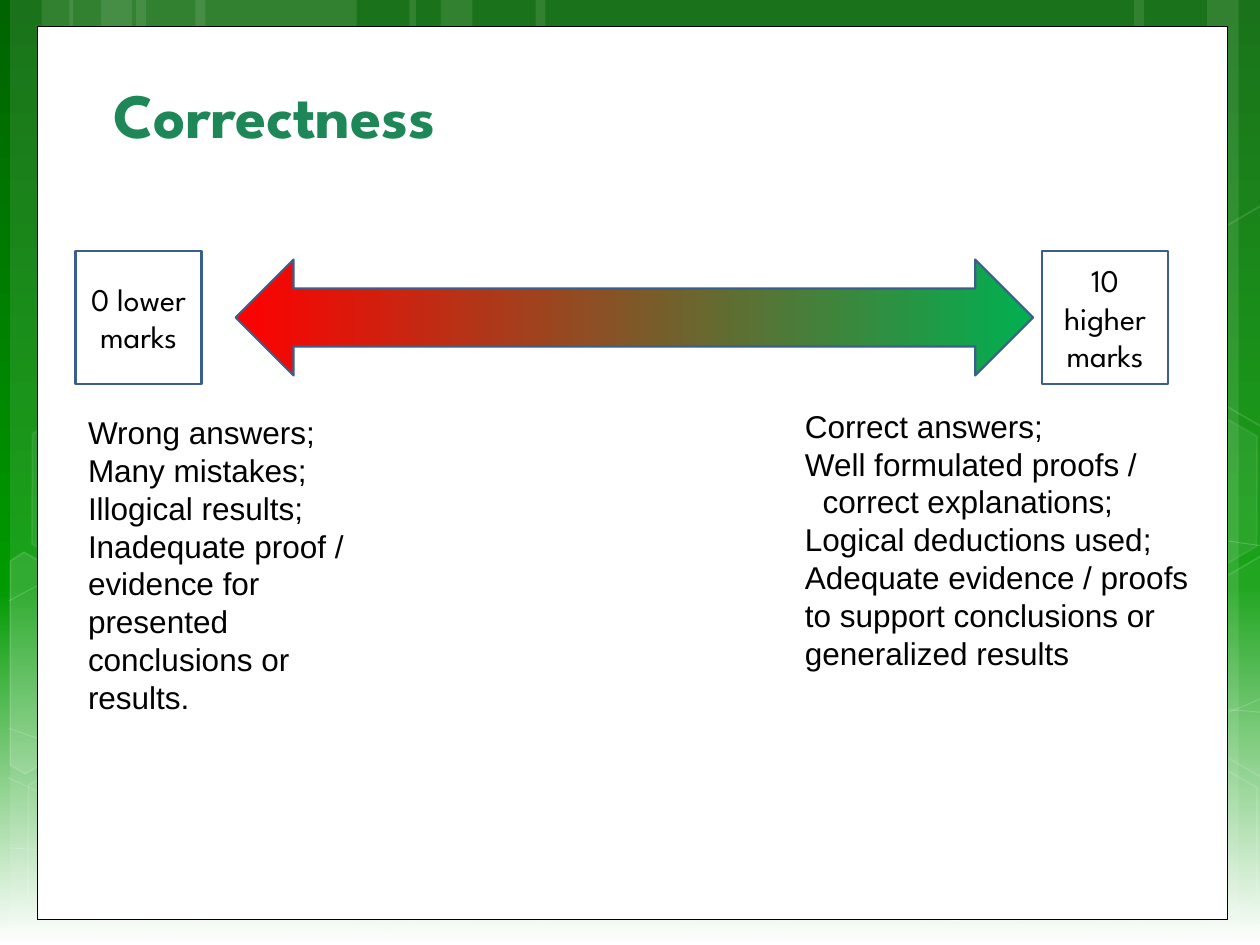
from copy import deepcopy
from math import cos, radians, sin

from lxml.etree import SubElement
from pptx import Presentation
from pptx.dml.color import RGBColor
from pptx.enum.shapes import MSO_SHAPE
from pptx.enum.text import MSO_ANCHOR, PP_ALIGN
from pptx.oxml.ns import qn
from pptx.util import Inches, Pt

WIDTH, HEIGHT = 10, 7.5
WHITE, BLACK = RGBColor(255, 255, 255), RGBColor(0, 0, 0)
DARK_GREEN, MID_GREEN = RGBColor(0, 0x64, 0), RGBColor(0, 0x99, 0)
TITLE_GREEN = RGBColor(0x1D, 0x87, 0x57)
BORDER_BLUE = RGBColor(0x3A, 0x5F, 0x8C)
LOW_RED, HIGH_GREEN = RGBColor(255, 0, 0), RGBColor(0, 0xB0, 0x50)
DISPLAY, BODY = "League Spartan", "Arial"

# Background stripes: left, width, rotation
STRIPES = [(1.08, 1.75, 0), (0.08, 0.5, 0), (0.33, 0.83, 0), (1.55, 1.75, 0),
           (0.55, 0.5, 0), (0.8, 0.83, 0), (7.33, 1.75, 180), (9.58, 0.5, 180),
           (9, 0.83, 180), (4.25, 3.08, 0), (3.25, 0.5, 0), (3.5, 0.83, 0)]

# Bezier curves: a start point, then three points per segment
CURVES = [
    [(0.07, 6.73), (0.61, 6.76), (1.15, 6.79), (1.9, 6.78), (2.65, 6.77), (3.58, 6.75),
     (4.58, 6.65), (5.58, 6.55), (7, 6.36), (7.92, 6.17), (8.83, 5.98), (9.77, 5.68),
     (10.07, 5.51)],
    [(0.07, 4.77), (0.36, 4.61), (0.65, 4.46), (1.21, 4.31), (1.78, 4.16), (2.59, 3.94),
     (3.47, 3.87), (4.36, 3.8), (5.44, 3.79), (6.54, 3.87), (7.64, 3.95), (9.47, 4.26),
     (10.07, 4.34)],
    [(0.06, 6.17), (1.27, 6.72), (2.47, 7.27), (3.34, 7.49)],
    [(0.07, 5.78), (0.38, 5.89), (0.7, 6), (1.28, 6.16), (1.86, 6.31), (2.73, 6.56),
     (3.57, 6.73), (4.4, 6.9), (5.45, 7.08), (6.28, 7.18), (7.11, 7.29), (8, 7.33),
     (8.53, 7.36), (9.05, 7.4), (9.19, 7.38), (9.45, 7.38), (9.71, 7.37), (9.89, 7.35),
     (10.07, 7.34)],
    [(2.42, 7.49), (2.6, 7.29), (2.78, 7.09), (3.02, 6.91), (3.26, 6.73), (3.6, 6.53),
     (3.88, 6.39), (4.16, 6.25), (4.33, 6.19), (4.7, 6.09), (5.06, 5.99), (5.73, 5.85),
     (6.08, 5.78), (6.44, 5.71), (6.49, 5.71), (6.8, 5.69), (7.11, 5.66), (7.6, 5.63),
     (7.94, 5.62), (8.29, 5.61), (8.86, 5.62), (8.86, 5.62), (9.08, 5.62), (9.3, 5.62),
     (9.53, 5.62), (9.71, 5.63), (9.88, 5.64), (9.97, 5.65), (10.06, 5.66), (10.03, 5.65),
     (10.06, 5.66)],
]
TILT = 30
# Hexagons: left, top, fill opacity (None for no fill), line opacity, in percent
HEXAGONS = [(3.34, 0.36, 4, 8), (4.97, 5.89, 6, 12), (0.11, 5.91, None, 12),
            (0.14, 3.12, 7, 8), (1.74, 5.92, None, 12), (8.34, 5.93, None, 12),
            (8.34, 3.14, 7, 8)]
# Hexagons cut off by the slide's edge: centre, corners as they stand tilted, fill opacity
CUT_HEXAGONS = [
    ((0.36, 5.35), [(0.08, 4.45), (0.19, 4.38), (0.96, 4.82), (0.95, 5.7), (0.2, 6.14),
                    (0.08, 6.07)], 10),
    ((9.85, 5.2), [(9.26, 4.85), (10.01, 4.41), (10.09, 4.46), (10.09, 6.13),
                   (10.02, 6.17), (9.26, 5.73)], 4),
    ((9.85, 2.41), [(9.26, 2.07), (10.01, 1.63), (10.1, 1.68), (10.09, 3.35),
                    (10.02, 3.39), (9.26, 2.95)], None),
]

TITLE = "Correctness"
# Marks at the ends of the scale: left, text
MARKS = [(0.6, "0 lower marks"), (8.27, "10 higher marks")]
# Descriptions: place, then paragraphs with their indent
DESCRIPTIONS = [
    ((0.6, 3.23, 2.45, 2.83), [
        ("Wrong answers;", 0),
        ("Many mistakes;", 0),
        ("Illogical results; Inadequate proof / evidence for presented conclusions or results.",
         0)]),
    ((6.29, 3.18, 3.37, 2.52), [
        ("Correct answers;", 0),
        ("Well formulated proofs /", 0),
        ("correct explanations;", 0.14),
        ("Logical deductions used;", 0),
        ("Adequate evidence / proofs to support conclusions or generalized results", 0)]),
]
TITLE_FORMAT = {"name": DISPLAY, "size": Pt(36), "bold": True}
MARK_FORMAT = {"name": DISPLAY, "size": Pt(18)}
BODY_FORMAT = {"name": BODY, "size": Pt(18)}

prs = Presentation()
prs.slide_width, prs.slide_height = Inches(WIDTH), Inches(HEIGHT)
slide = prs.slides.add_slide(prs.slide_layouts[6])


def set_gradient(fill, stops, angle):
    fill.gradient()
    fill.gradient_angle = angle
    first = fill.gradient_stops[0]._gs
    while len(fill.gradient_stops) < len(stops):
        first.addnext(deepcopy(first))
    for stop, (position, color) in zip(fill.gradient_stops, stops):
        stop.position = position
        stop.color.rgb = color


def paint(fill, color, opacity=100):
    """Fill with a colour at an opacity in percent, or not at all for None."""
    if color is None or opacity is None:
        fill.background()
        return
    fill.solid()
    fill.fore_color.rgb = color
    if opacity < 100:
        srgb = fill._xPr.find(".//" + qn("a:srgbClr"))
        SubElement(srgb, qn("a:alpha"), val=str(opacity * 1000))


def style(shape, fill=None, fill_opacity=100, line=None, line_opacity=100, width=1):
    shape.shadow.inherit = False
    paint(shape.fill, fill, fill_opacity)
    paint(shape.line.fill, line, line_opacity)
    if line is not None:
        shape.line.width = Pt(width)
    return shape


def add_preset(kind, place, rotation=0):
    shape = slide.shapes.add_shape(kind, *map(Inches, place))
    shape.rotation = rotation
    return shape


def add_outline(points, close):
    corners = [(Inches(x), Inches(y)) for x, y in points]
    builder = slide.shapes.build_freeform(*corners[0], scale=1.0)
    builder.add_line_segments(corners[1:], close=close)
    return builder.convert_to_shape()


def add_curve(points):
    """Join each three line segments of an outline into one Bezier segment."""
    curve = add_outline(points, False)
    lines = list(curve._element.iter(qn("a:lnTo")))
    for i in range(0, len(lines), 3):
        bezier = SubElement(lines[i].getparent(), qn("a:cubicBezTo"))
        for line in lines[i:i + 3]:
            bezier.append(line[0])
            line.getparent().remove(line)
    return curve


def turn_back(point, center):
    """Undo the tilt of a point around a centre."""
    x, y = point[0] - center[0], point[1] - center[1]
    c, s = cos(radians(TILT)), sin(radians(TILT))
    return center[0] + x * c + y * s, center[1] - x * s + y * c


def write(shape, paragraphs, font_format, color=BLACK, anchor=MSO_ANCHOR.TOP,
          align=PP_ALIGN.LEFT):
    frame = shape.text_frame
    frame.word_wrap = True
    frame.vertical_anchor = anchor
    for i, (text, indent) in enumerate(paragraphs):
        paragraph = frame.add_paragraph() if i else frame.paragraphs[0]
        paragraph.alignment = align
        if indent:
            paragraph._p.get_or_add_pPr().set("marL", str(Inches(indent)))
        run = paragraph.add_run()
        run.text = text
        run.font.color.rgb = color
        for name, value in font_format.items():
            setattr(run.font, name, value)


# Backdrop
set_gradient(slide.background.fill, [(0, DARK_GREEN), (0.62, MID_GREEN), (1, WHITE)], 270)
for left, width, rotation in STRIPES:
    style(add_preset(MSO_SHAPE.RECTANGLE, (left, 0, width, HEIGHT), rotation), WHITE, 10)
for curve_points in CURVES:
    style(add_curve(curve_points), line=WHITE, line_opacity=20, width=0.5)
for left, top, fill_opacity, line_opacity in HEXAGONS:
    hexagon = add_preset(MSO_SHAPE.HEXAGON, (left, top, 1.75, 1.52), TILT)
    hexagon.adjustments[0] = 0.285
    style(hexagon, WHITE, fill_opacity, WHITE, line_opacity)
for center, corners, fill_opacity in CUT_HEXAGONS:
    cut_hexagon = add_outline([turn_back(corner, center) for corner in corners], True)
    cut_hexagon.rotation = TILT
    style(cut_hexagon, WHITE, fill_opacity, WHITE, 12)
style(add_preset(MSO_SHAPE.RECTANGLE, (0.3, 0.21, 9.44, 7.09)), WHITE, line=BLACK, width=0.5)

# Content
title_box = slide.shapes.add_textbox(*map(Inches, (0.8, 0.49, 8.42, 0.76)))
write(title_box, [(TITLE, 0)], TITLE_FORMAT, TITLE_GREEN, MSO_ANCHOR.BOTTOM)
for place, paragraphs in DESCRIPTIONS:
    write(slide.shapes.add_textbox(*map(Inches, place)), paragraphs, BODY_FORMAT)
for left, text in MARKS:
    mark = style(add_preset(MSO_SHAPE.RECTANGLE, (left, 1.99, 1, 1.06)),
                 line=BORDER_BLUE, width=1.25)
    write(mark, [(text, 0)], MARK_FORMAT, anchor=MSO_ANCHOR.MIDDLE, align=PP_ALIGN.CENTER)
arrow = style(add_preset(MSO_SHAPE.LEFT_RIGHT_ARROW, (1.87, 2.06, 6.33, 0.92)),
              line=BORDER_BLUE, width=1.25)
set_gradient(arrow.fill, [(0, LOW_RED), (1, HIGH_GREEN)], 0)

prs.save("out.pptx")
